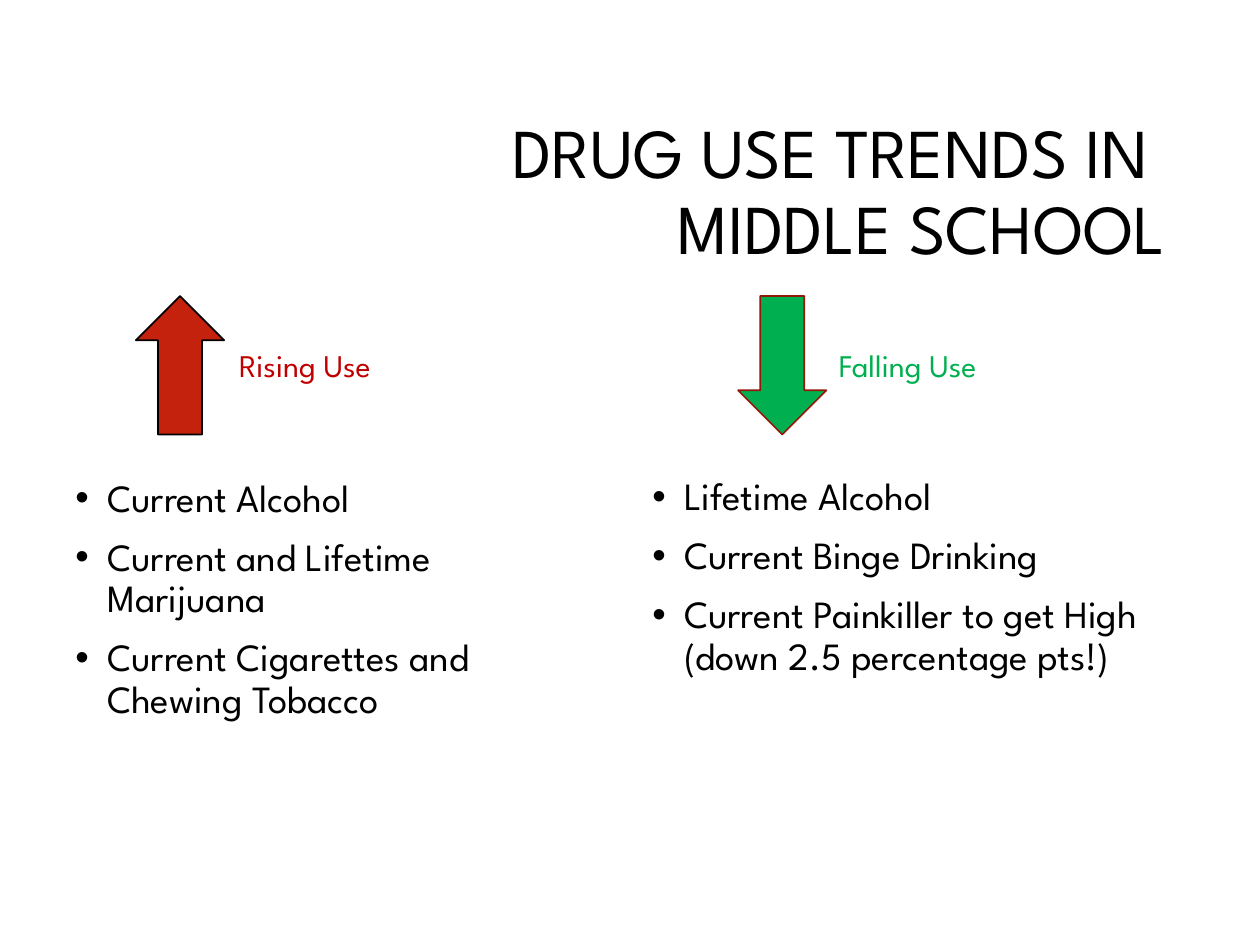
from dataclasses import dataclass

from lxml import etree
from pptx import Presentation
from pptx.dml.color import RGBColor
from pptx.enum.shapes import MSO_SHAPE
from pptx.enum.text import MSO_ANCHOR, PP_ALIGN
from pptx.oxml.ns import qn
from pptx.util import Cm, Pt

UP_ARROW, DOWN_ARROW = MSO_SHAPE.UP_ARROW, MSO_SHAPE.DOWN_ARROW
MIDDLE = MSO_ANCHOR.MIDDLE
LEFT, RIGHT = PP_ALIGN.LEFT, PP_ALIGN.RIGHT


@dataclass(frozen=True)
class Theme:
    font: str = "League Spartan"
    title_size: int = 40
    list_size: int = 22
    label_size: int = 18
    text: str = "000000"
    rising: str = "C00000"
    rising_fill: str = "C4220D"
    rising_line: str = "000000"
    falling: str = "00B050"
    falling_line: str = "91190A"


theme = Theme()


def add_text(page, left, top, width, height, text, size, color, align=LEFT):
    box = page.shapes.add_textbox(Cm(left), Cm(top), Cm(width), Cm(height))
    box.text_frame.word_wrap = True
    box.text_frame.text = text
    for paragraph in box.text_frame.paragraphs:
        paragraph.alignment = align
        for span in paragraph.runs:
            span.font.name = theme.font
            span.font.size = Pt(size)
            span.font.color.rgb = RGBColor.from_string(color)
    return box


def add_bullets(box):
    for index, paragraph in enumerate(box.text_frame.paragraphs):
        paragraph.line_spacing = 0.9
        paragraph.space_before = Pt(10 if index else 0)
        properties = paragraph._p.get_or_add_pPr()
        properties.set("marL", str(Cm(0.64)))
        properties.set("indent", str(-Cm(0.64)))
        etree.SubElement(properties, qn("a:buFont")).set("typeface", "Arial")
        etree.SubElement(properties, qn("a:buChar")).set("char", "•")


deck = Presentation()
deck.slide_width, deck.slide_height = Cm(25.4), Cm(19.05)
page = deck.slides.add_slide(deck.slide_layouts[6])

# Title
title = add_text(page, 6.05, 2.11, 17.7, 3.6, "DRUG USE TRENDS IN \vMIDDLE SCHOOL",
                 theme.title_size, theme.text, RIGHT)
title.text_frame.vertical_anchor = MIDDLE
title.text_frame.paragraphs[0].line_spacing = 0.9

# One column per trend: arrow, label and bullet list
trends = [
    (UP_ARROW, 2.74, theme.rising_fill, theme.rising_line,
     "Rising Use", 4.57, theme.rising, 1.27, 9.53,
     ["Current Alcohol", "Current and Lifetime Marijuana",
      "Current Cigarettes and Chewing Tobacco"]),
    (DOWN_ARROW, 14.88, theme.falling, theme.falling_line,
     "Falling Use", 16.66, theme.falling, 12.9, 9.5,
     ["Lifetime Alcohol", "Current Binge Drinking",
      "Current Painkiller to get High (down 2.5 percentage pts!)"]),
]
for (kind, arrow_left, fill, line, label, label_left, label_color,
     list_left, list_top, items) in trends:
    arrow = page.shapes.add_shape(kind, Cm(arrow_left), Cm(5.97), Cm(1.78), Cm(2.79))
    arrow.shadow.inherit = False
    arrow.fill.solid()
    arrow.fill.fore_color.rgb = RGBColor.from_string(fill)
    arrow.line.color.rgb = RGBColor.from_string(line)
    arrow.line.width = Pt(1)

    add_text(page, label_left, 6.86, 3.81, 1.02, label, theme.label_size, label_color)
    add_bullets(add_text(page, list_left, list_top, 10.86, 8.69, "\n".join(items),
                         theme.list_size, theme.text))

deck.save("out.pptx")
